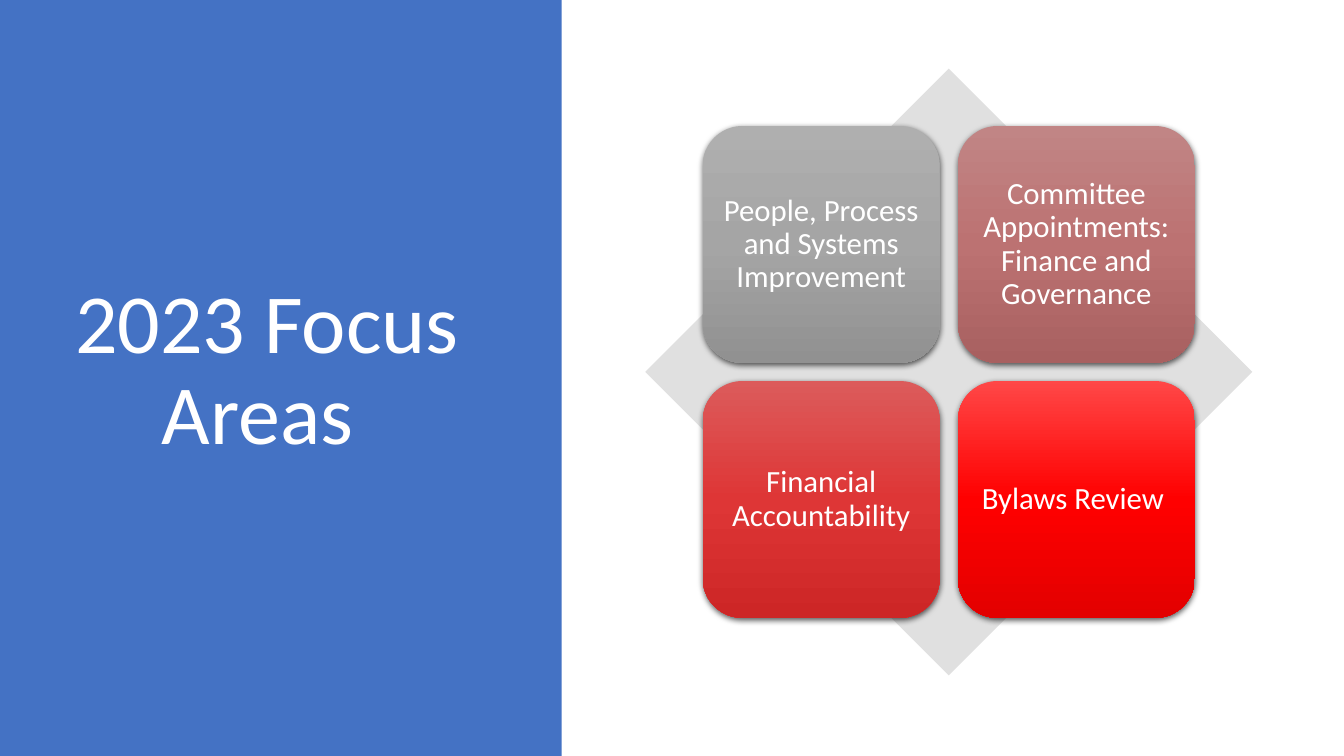
from lxml.etree import SubElement
from pptx import Presentation
from pptx.dml.color import RGBColor
from pptx.enum.shapes import MSO_SHAPE as Shape
from pptx.enum.text import MSO_ANCHOR as Anchor, PP_ALIGN as Align
from pptx.oxml.ns import qn
from pptx.util import Inches, Pt

TITLE = "2023 Focus Areas "
FOCUS_AREAS = [
    ("People, Process and Systems Improvement", ("AFAFAF", "A5A5A5", "919191")),
    ("Committee Appointments: Finance and Governance", ("C18585", "BC7272", "A86060")),
    ("Financial Accountability", ("DC5B5B", "DE3636", "CD2626")),
    ("Bylaws Review ", ("FF4747", "FF0000", "E30000")),
]
COLORS = {"panel": "4472C4", "diamond": "E0E0E0", "text": "FFFFFF", "shadow": "000000"}
FONT = "Calibri"

WIDTH, HEIGHT = 13.33, 7.5
PANEL_WIDTH = 5.57
DIAMOND_LEFT, DIAMOND_SIZE = 6.4, 6.02
DIAMOND_TOP = 0.68
COLUMNS = 2
TILE_SIZE, TILE_PITCH = 2.35, 2.53
TILE_MARGIN = (DIAMOND_SIZE - TILE_PITCH - TILE_SIZE) / 2


def add_flat_shape(shapes, kind, left, top, width, height, color=None):
    shape = shapes.add_shape(kind, *map(Inches, (left, top, width, height)))
    shape.shadow.inherit = False
    shape.line.fill.background()
    if color:
        shape.fill.solid()
        shape.fill.fore_color.rgb = RGBColor.from_string(color)
    return shape


def write_text(shape, text, size, color=COLORS["text"], insets=(0.1, 0.05)):
    frame = shape.text_frame
    frame.word_wrap = True
    frame.vertical_anchor = Anchor.MIDDLE
    frame.margin_left = frame.margin_right = Inches(insets[0])
    frame.margin_top = frame.margin_bottom = Inches(insets[1])
    paragraph = frame.paragraphs[0]
    paragraph.alignment = Align.CENTER
    paragraph.line_spacing = 0.9
    paragraph.space_before = Pt(0)
    run = paragraph.add_run()
    run.text = text
    run.font.name = FONT
    run.font.size = Pt(size)
    run.font.color.rgb = RGBColor.from_string(color)


def fill_gradient(shape, colors):
    """Fill from top to bottom with evenly spaced colour stops."""
    shape.fill.gradient()
    shape.fill.gradient_angle = 270
    stops = shape.element.spPr.find(qn("a:gradFill")).find(qn("a:gsLst"))
    for stop in list(stops):
        stops.remove(stop)
    for index, color in enumerate(colors):
        position = 100000 * index // (len(colors) - 1)
        stop = SubElement(stops, qn("a:gs"), pos=str(position))
        SubElement(stop, qn("a:srgbClr"), val=color)


def add_shadow(shape):
    effects = shape.element.spPr.find(qn("a:effectLst"))
    shadow = SubElement(effects, qn("a:outerShdw"), blurRad=str(Pt(4.5)),
                        dist=str(Pt(1.5)), dir="5400000", algn="ctr", rotWithShape="0")
    color = SubElement(shadow, qn("a:srgbClr"), val=COLORS["shadow"])
    SubElement(color, qn("a:alpha"), val="63000")


def main():
    presentation = Presentation()
    presentation.slide_width, presentation.slide_height = Inches(WIDTH), Inches(HEIGHT)
    slide = presentation.slides.add_slide(presentation.slide_layouts[5])

    panel = add_flat_shape(slide.shapes, Shape.RECTANGLE, 0, 0, PANEL_WIDTH, HEIGHT,
                           COLORS["panel"])
    title = slide.shapes.title
    panel.element.addnext(title.element)
    title.left, title.top = Inches(0.57), Inches(DIAMOND_TOP)
    title.width, title.height = Inches(4.16), Inches(DIAMOND_SIZE)
    write_text(title, TITLE, 60)

    matrix = slide.shapes.add_group_shape()
    add_flat_shape(matrix.shapes, Shape.DIAMOND, DIAMOND_LEFT, DIAMOND_TOP,
                   DIAMOND_SIZE, DIAMOND_SIZE, COLORS["diamond"])
    for index, (label, colors) in enumerate(FOCUS_AREAS):
        row, column = divmod(index, COLUMNS)
        tile = add_flat_shape(matrix.shapes, Shape.ROUNDED_RECTANGLE,
                              DIAMOND_LEFT + TILE_MARGIN + column * TILE_PITCH,
                              DIAMOND_TOP + TILE_MARGIN + row * TILE_PITCH,
                              TILE_SIZE, TILE_SIZE)
        tile.adjustments[0] = 0.167
        fill_gradient(tile, colors)
        add_shadow(tile)
        write_text(tile, label, 22, insets=(0.09, 0.09))

    presentation.save("out.pptx")


if __name__ == "__main__":
    main()
